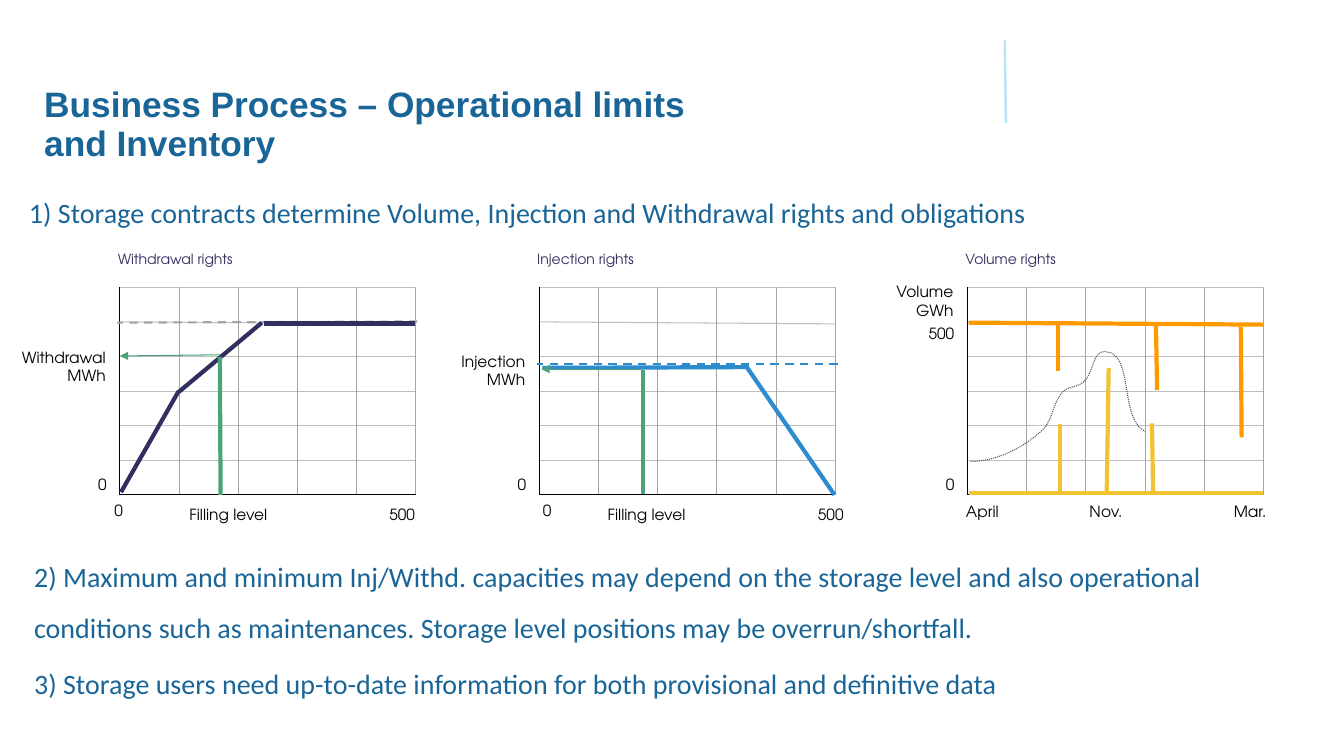
from lxml.etree import SubElement
from pptx import Presentation
from pptx.dml.color import RGBColor
from pptx.enum.dml import MSO_LINE_DASH_STYLE as Dash
from pptx.enum.shapes import MSO_CONNECTOR as Connector
from pptx.enum.text import MSO_ANCHOR as Anchor, MSO_AUTO_SIZE as AutoSize, PP_ALIGN as Align
from pptx.oxml.ns import qn
from pptx.util import Cm, Pt

BLUE, NAVY, BLACK = "1A6597", "312E60", "000000"
ROW_GREY, COLUMN_GREY, SKY = "BFBFBF", "A5A5A5", "2C8CCD"
GREEN, ORANGE, YELLOW = "4BA37A", "FF9900", "F1C232"
CHART_FONT = "TeX Gyre Adventor"

# Shared geometry of the three plots, in cm
TOP, BOTTOM, WIDTH = 7.24, 12.47, 7.46
ROWS, COLUMNS = 6, 5
WITHDRAWAL_X, INJECTION_X, VOLUME_X = 3.02, 13.59, 24.38


def color(hex_code):
    return RGBColor.from_string(hex_code)


def bezier(start, c1, c2, end, steps=12):
    """Points after start along a cubic curve."""
    for step in range(1, steps + 1):
        t = step / steps
        u = 1 - t
        yield tuple(u**3 * a + 3 * u**2 * t * b + 3 * u * t**2 * c + t**3 * d
                    for a, b, c, d in zip(start, c1, c2, end))


class SlideBuilder:
    def __init__(self, slide):
        self.slide = slide
        self.shapes = slide.shapes

    def style_text(self, paragraph, size, hex_code, font, bold=False):
        paragraph.font.size = Pt(size)
        paragraph.font.name = font
        paragraph.font.bold = bold
        paragraph.font.color.rgb = color(hex_code)

    def title(self, text, x, y, w, h):
        title = self.shapes.title
        title.left, title.top, title.width, title.height = Cm(x), Cm(y), Cm(w), Cm(h)
        frame = title.text_frame
        frame.text = text
        frame.word_wrap = True
        frame.auto_size = AutoSize.NONE
        frame.vertical_anchor = Anchor.MIDDLE
        paragraph = frame.paragraphs[0]
        paragraph.alignment = Align.LEFT
        paragraph.line_spacing = 0.9
        self.style_text(paragraph, 25.2, BLUE, "Arial", True)

    def text(self, text, x, y, w, h, size=11, hex_code=BLACK, font=CHART_FONT,
             align=Align.RIGHT, spacing=None, before=0):
        frame = self.shapes.add_textbox(Cm(x), Cm(y), Cm(w), Cm(h)).text_frame
        frame.word_wrap = True
        frame.text = text
        for index, paragraph in enumerate(frame.paragraphs):
            paragraph.alignment = align
            if spacing:
                paragraph.line_spacing = spacing
            if index:
                paragraph.space_before = Pt(before)
            self.style_text(paragraph, size, hex_code, font)

    def statement(self, text, x, y, w, h):
        self.text(text, x, y, w, h, 20, BLUE, "Calibri", Align.LEFT, 1.5, 4)

    def line(self, x1, y1, x2, y2, hex_code, width=0.75, dash=None, arrow=False):
        line = self.shapes.add_connector(Connector.STRAIGHT, Cm(x1), Cm(y1), Cm(x2), Cm(y2))
        line.line.color.rgb = color(hex_code)
        line.line.width = Pt(width)
        if dash:
            line.line.dash_style = dash
        properties = line._element.spPr
        if arrow:
            SubElement(properties.find(qn("a:ln")), qn("a:tailEnd"), type="triangle")
        SubElement(properties, qn("a:effectLst"))

    def curve(self, start, segments, hex_code, width, dash):
        points = [start]
        for segment in segments:
            points.extend(bezier(points[-1], *segment))
        builder = self.shapes.build_freeform(*(Cm(v) for v in start), scale=1.0)
        builder.add_line_segments([(Cm(x), Cm(y)) for x, y in points[1:]], close=False)
        shape = builder.convert_to_shape()
        shape.shadow.inherit = False
        shape.fill.background()
        shape.line.color.rgb = color(hex_code)
        shape.line.width = Pt(width)
        shape.line.dash_style = dash

    def plot(self, x, heading, axis_name, axis_y, x_labels):
        """Grid, axes and labels; x_labels hold text, offset, top and width."""
        right = x + WIDTH
        self.text(heading, x - 0.3, 6.2, 6.1, 1, 10, NAVY, align=Align.LEFT)
        for row in range(ROWS):
            y = TOP + row * (BOTTOM - TOP) / ROWS
            slant = 0.05 if row == 1 else 0
            self.line(x, y, right, y + slant, ROW_GREY)
        for column in range(1, COLUMNS + 1):
            column_x = x + column * WIDTH / COLUMNS
            self.line(column_x, BOTTOM, column_x, TOP, COLUMN_GREY)
        self.line(x, BOTTOM, right, BOTTOM, BLACK)
        self.line(x, BOTTOM, x, TOP, BLACK)
        self.text(axis_name, x - 2.77, axis_y, 2.67, 1)
        self.text("0", x - 1.5, 11.86, 1.42, 0.58)
        for label, offset, top, width in x_labels:
            self.text(label, x + offset, top, width, 0.7)


def main():
    prs = Presentation()
    prs.slide_width, prs.slide_height = Cm(33.87), Cm(19.05)
    page = SlideBuilder(prs.slides.add_slide(prs.slide_layouts[5]))

    # Heading and first statement
    page.line(25.32, 1.02, 25.35, 3.1, "BAE4F7", 1.75)
    page.title("Business Process – Operational limits and Inventory", 0.86, 2.57, 17.55, 1.19)
    page.statement("1) Storage contracts determine Volume, Injection and Withdrawal rights "
                   "and obligations", 0.48, 4.39, 32.2, 1.14)

    # Plot backgrounds
    page.plot(WITHDRAWAL_X, "Withdrawal rights", "Withdrawal\nMWh", 8.64,
              [("0", -1.09, 12.5, 1.42), ("Filling level", 1.3, 12.6, 2.67),
               ("500", 6.27, 12.6, 1.42)])
    page.plot(INJECTION_X, "Injection rights", "Injection\nMWh", 8.74,
              [("0", -0.86, 12.5, 1.42), ("Filling level", 1.27, 12.6, 2.67),
               ("500", 6.5, 12.6, 1.42)])
    page.plot(VOLUME_X, "Volume rights", "Volume\nGWh", 6.99,
              [("April", -0.43, 12.52, 1.47), ("Nov.", 2.69, 12.52, 1.47),
               ("Mar.", 6.32, 12.52, 1.47)])
    page.text("500", VOLUME_X - 1.5, 8.05, 1.42, 0.58)

    # Limits drawn as dashes
    page.line(10.52, 8.1, 2.95, 8.13, COLUMN_GREY, 1.5, Dash.DASH)
    page.line(21.11, 9.17, 13.54, 9.17, SKY, 1.5, Dash.DASH)

    # Rights curves and bounds
    rights = [
        (NAVY, [(4.5, 9.86, 3.05, 12.4), (6.6, 8.13, 4.5, 9.88), (10.46, 8.15, 6.65, 8.15)]),
        (SKY, [(18.87, 9.25, 13.67, 9.27), (21.03, 12.47, 18.82, 9.25)]),
        (GREEN, [(5.56, 12.47, 5.54, 8.99), (16.21, 12.45, 16.21, 9.32)]),
        (ORANGE, [(26.67, 9.35, 26.67, 8.13), (29.16, 9.83, 29.13, 8.13),
                  (31.29, 11.02, 31.27, 8.23)]),
        (YELLOW, [(31.83, 12.42, 24.43, 12.42), (26.72, 12.37, 26.72, 10.69),
                  (29.06, 12.37, 29.03, 10.67), (27.89, 12.42, 27.94, 9.27)]),
        (ORANGE, [(31.85, 8.18, 24.41, 8.13)]),
    ]
    for hex_code, segments in rights:
        for segment in segments:
            page.line(*segment, hex_code, 3)
    page.line(5.54, 8.94, 3.02, 8.97, GREEN, arrow=True)
    page.line(16.15, 9.3, 13.64, 9.3, GREEN, arrow=True)

    # Storage level over the year
    page.curve((24.46, 11.63), [
        ((25.12, 11.63), (25.81, 11.28), (26.29, 10.82)),
        ((26.54, 10.57), (26.54, 10.11), (26.8, 9.86)),
        ((26.95, 9.73), (27.2, 9.75), (27.33, 9.6)),
        ((27.56, 9.4), (27.53, 8.86), (27.84, 8.86)),
        ((28.6, 8.86), (28.19, 10.54), (28.85, 10.87)),
    ], "44546A", 0.75, Dash.ROUND_DOT)

    # Closing statements
    page.statement("2) Maximum and minimum Inj/Withd. capacities may depend on the storage level "
                   "and also operational conditions such as maintenances. Storage level positions "
                   "may be overrun/shortfall.\n"
                   "3) Storage users need up-to-date information for both provisional and "
                   "definitive data", 0.61, 13.56, 32.8, 5.13)

    prs.save("out.pptx")


if __name__ == "__main__":
    main()
